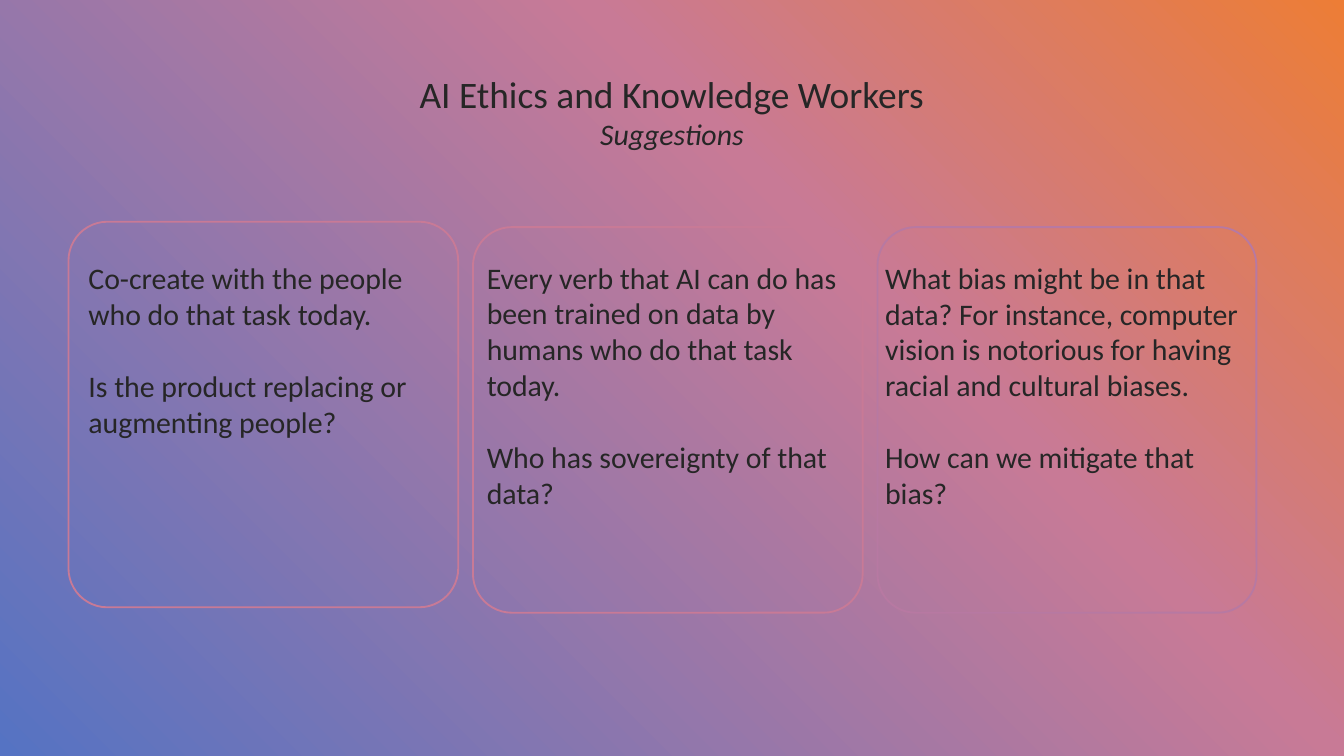
from pptx import Presentation
from pptx.dml.color import RGBColor
from pptx.enum.shapes import MSO_SHAPE as Shape
from pptx.enum.text import MSO_AUTO_SIZE as AutoSize, PP_ALIGN as Align
from pptx.oxml import parse_xml
from pptx.oxml.ns import nsdecls, qn
from pptx.util import Pt

PINK, MAUVE = "C87A96", "B779A2"


def color(value):
    return RGBColor.from_string(value)


class SlideBuilder:
    font = {"name": "Calibri", "size": Pt(16)}
    ink = "262626"

    def __init__(self, slide):
        self.slide = slide

    def background(self, stops):
        """Fill with a gradient that spreads from the bottom left corner."""
        self.slide.background.fill.solid()
        properties = self.slide.element.find(".//" + qn("p:bgPr"))
        stops_xml = "".join(
            f'<a:gs pos="{position * 1000}"><a:srgbClr val="{value}"/></a:gs>'
            for position, value in stops)
        gradient = parse_xml(
            f'<a:gradFill {nsdecls("a")} rotWithShape="1"><a:gsLst>{stops_xml}</a:gsLst>'
            '<a:path path="circle"><a:fillToRect t="100000" r="100000"/></a:path>'
            '</a:gradFill>')
        properties.replace(properties[0], gradient)

    def text(self, box, lines, align=Align.LEFT, gap=0):
        """Add a text box; each line is a pair of wording and font changes."""
        frame = self.slide.shapes.add_textbox(*map(Pt, box)).text_frame
        frame.word_wrap = True
        frame.auto_size = AutoSize.SHAPE_TO_FIT_TEXT
        for index, (wording, changes) in enumerate(lines):
            paragraph = frame.paragraphs[0] if index == 0 else frame.add_paragraph()
            paragraph.alignment = align
            if index:
                paragraph.space_before = Pt(gap)
            run = paragraph.add_run()
            run.text = wording
            run.font.color.rgb = color(self.ink)
            for name, value in {**self.font, **changes}.items():
                setattr(run.font, name, value)

    def outline(self, box, line_color):
        shape = self.slide.shapes.add_shape(Shape.ROUNDED_RECTANGLE, *map(Pt, box))
        shape.adjustments[0] = 0.101
        shape.shadow.inherit = False
        shape.fill.background()
        shape.line.color.rgb = color(line_color)
        shape.line.width = Pt(1)


def main():
    presentation = Presentation()
    presentation.slide_width, presentation.slide_height = Pt(720), Pt(405)
    builder = SlideBuilder(presentation.slides.add_slide(presentation.slide_layouts[6]))
    builder.background([(0, "5573C3"), (64, PINK), (100, "ED7D36")])

    # Heading
    builder.text((0, 34.6, 720, 51), [
        ("AI Ethics and Knowledge Workers", {"size": Pt(20)}),
        ("Suggestions", {"italic": True}),
    ], Align.CENTER)

    # Suggestions: advice, question, text height, card top, card width, outline
    suggestions = [
        ("Co-create with the people who do that task today.",
         "Is the product replacing or augmenting people?",
         143.3, 118.8, 208.8, PINK),
        ("Every verb that AI can do has been trained on data by humans "
         "who do that task today.",
         "Who has sovereignty of that data?",
         162.7, 121.7, 208.8, PINK),
        ("What bias might be in that data? For instance, computer vision is "
         "notorious for having racial and cultural biases.",
         "How can we mitigate that bias?",
         143.3, 121.7, 203, MAUVE),
    ]
    for column, (advice, question, height, top, width, line) in enumerate(suggestions):
        builder.text((40.3 + 213.4 * column, 135.4, 213.1, height),
                     [(advice, {}), (question, {})], gap=19.5)
        builder.outline((36.7 + 216.7 * column, top, width, 206.6), line)

    presentation.save("out.pptx")


if __name__ == "__main__":
    main()
